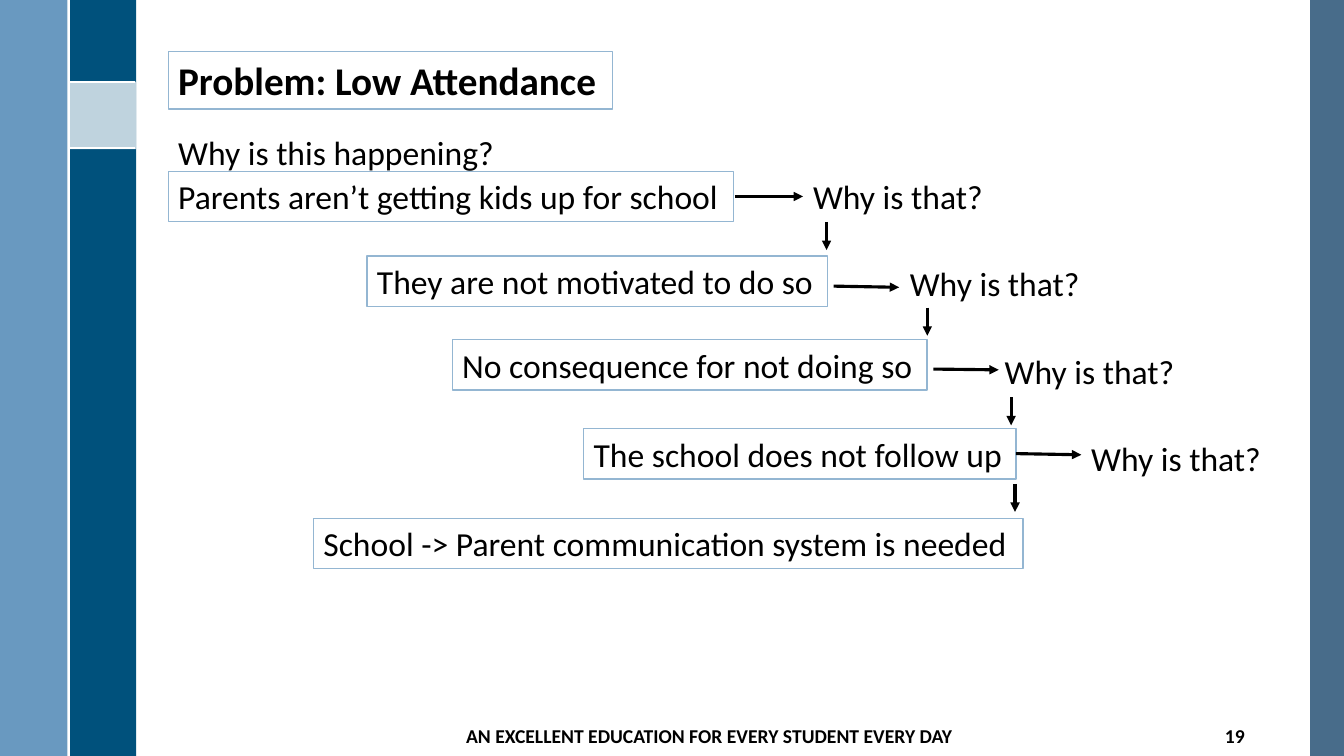
from lxml import etree
from pptx import Presentation
from pptx.dml.color import RGBColor
from pptx.enum import shapes, text
from pptx.oxml import ns
from pptx.util import Cm, Pt

WIDE, HIGH = 33.87, 19.05
TALL = 1.27  # height of one text row
DROP = 0.71  # length of a down arrow
HUE = {"edge": "355D7E", "navy": "00517C", "sky": "558BB8",
       "white": "FFFFFF", "rim": "94B6D2", "ink": "000000"}

deck = Presentation()
deck.slide_width, deck.slide_height = Cm(WIDE), Cm(HIGH)
slide = deck.slides.add_slide(deck.slide_layouts[6])


def label(words, x, y, w, h=TALL, size=24, rim=False, bold=False,
          align=text.PP_ALIGN.LEFT, anchor=text.MSO_ANCHOR.TOP):
    box = slide.shapes.add_textbox(Cm(x), Cm(y), Cm(w), Cm(h))
    if rim:
        box.line.color.rgb = RGBColor.from_string(HUE["rim"])
        box.line.width = Pt(1)
    frame = box.text_frame
    frame.word_wrap = False
    frame.vertical_anchor = anchor
    para = frame.paragraphs[0]
    para.alignment = align
    run = para.add_run()
    run.text = words
    look = {"name": "Calibri", "size": Pt(size), "bold": bold}
    for key, value in look.items():
        setattr(run.font, key, value)
    run.font.color.rgb = RGBColor.from_string(HUE["ink"])


def stroke(x1, y1, x2, y2, hue="ink", width=2.25, head=True):
    line = slide.shapes.add_connector(
        shapes.MSO_CONNECTOR.STRAIGHT, Cm(x1), Cm(y1), Cm(x2), Cm(y2))
    line.line.color.rgb = RGBColor.from_string(HUE[hue])
    line.line.width = Pt(width)
    if head:
        etree.SubElement(line.line._get_or_add_ln(), ns.qn("a:tailEnd"),
                         type="triangle")
    etree.SubElement(line._element.spPr, ns.qn("a:effectLst"))


# Side bands: x, y, width, height, colour, opacity in percent
bands = [
    (33.02, 0, 0.85, HIGH, "edge", 90),
    (1.73, 0, 1.7, HIGH, "navy", 100),
    (0, 0, 1.7, HIGH, "sky", 88),
    (1.73, 2.06, 1.7, 1.7, "white", 75),
]
for x, y, w, h, hue, alpha in bands:
    band = slide.shapes.add_shape(
        shapes.MSO_SHAPE.RECTANGLE, Cm(x), Cm(y), Cm(w), Cm(h))
    band.shadow.inherit = False
    band.line.fill.background()
    band.fill.solid()
    band.fill.fore_color.rgb = RGBColor.from_string(HUE[hue])
    if alpha < 100:
        tint = band._element.spPr.find(".//" + ns.qn("a:srgbClr"))
        etree.SubElement(tint, ns.qn("a:alpha"), val=str(alpha * 1000))

for ends in [(1.73, 2.06, 3.4, 2.06), (1.73, 3.73, 3.4, 3.73),
             (1.73, 0, 1.73, HIGH)]:
    stroke(*ends, hue="white", width=1.5, head=False)

# Footer
foot = {"h": 1.02, "size": 14, "bold": True,
        "anchor": text.MSO_ANCHOR.MIDDLE}
label("AN EXCELLENT EDUCATION FOR EVERY STUDENT EVERY DAY",
      11.43, 18.03, 12.9, align=text.PP_ALIGN.CENTER, **foot)
label("19", 29.92, 18.03, 1.7, align=text.PP_ALIGN.RIGHT, **foot)

# Problem and first question
label("Problem: Low Attendance", 4.24, 1.3, 11.2, 1.45,
      size=28, rim=True, bold=True)
label("Why is this happening?", 4.24, 3.2, 8.53)

# Chain of causes: words, x, y, width
causes = [
    ("Parents aren’t getting kids up for school", 4.24, 4.32, 14.25),
    ("They are not motivated to do so", 9.25, 6.45, 11.61),
    ("No consequence for not doing so", 11.4, 8.56, 11.96),
    ("The school does not follow up", 14.71, 10.8, 10.9),
    ("School -> Parent communication system is needed", 7.9, 13.06, 17.88),
]
for words, x, y, w in causes:
    label(words, x, y, w, rim=True)

# Each step: question place, right arrow ends, down arrow start
steps = [
    ((20.24, 4.32), (18.52, 4.95, 20.24, 4.95), (20.83, 5.59)),
    ((22.68, 6.5), (21.01, 7.21, 22.66, 7.24), (23.37, 7.75)),
    ((25.07, 8.71), (23.52, 9.3, 25.17, 9.32), (25.48, 10.01)),
    ((27.25, 10.92), (25.6, 11.43, 27.25, 11.46), (25.58, 12.19)),
]
for place, across, (x, y) in steps:
    label("Why is that?", *place, 4.83)
    stroke(*across)
    stroke(x, y, x, y + DROP)

deck.save("out.pptx")
